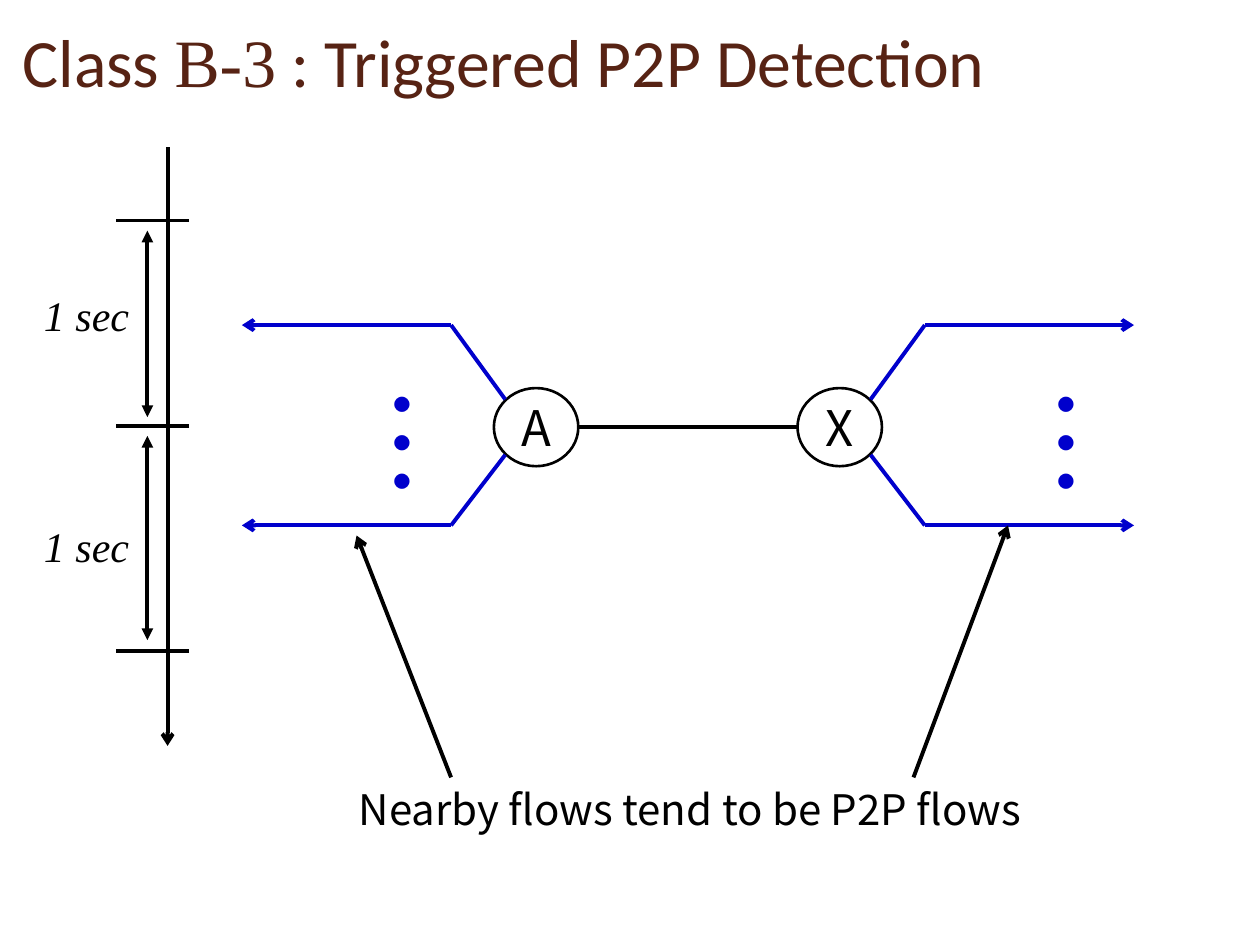
"""Build the slide on triggered P2P detection: a time axis beside a flow graph."""
from lxml import etree
from pptx import Presentation, util as u
from pptx.dml.color import RGBColor
from pptx.enum import shapes as sh, text as t
from pptx.oxml.ns import qn

BROWN = RGBColor(0x57, 0x23, 0x14)
BLACK = RGBColor(0, 0, 0)
BLUE = RGBColor(0, 0, 0xCC)
WHITE = RGBColor(255, 255, 255)
LATIN, SERIF, SANS = "Calibri", "Times New Roman", "Noto Sans CJK KR"

TITLE = [("Class ", LATIN), ("B-3", SERIF), (" : Triggered P2P Detection", LATIN)]
CAPTION = "Nearby flows tend to be P2P flows"
INTERVAL, INTERVAL_TOPS = "1 sec", (2.25, 4.08)
SPANS = [(1.83, 3.31), (3.46, 5.08)]
TICKS = (1.75, 3.38, 5.17)
AXIS_X, SPAN_X, TICK_LEFT, TICK_RIGHT = 1.33, 1.17, 0.92, 1.5
NODES = [("A", 3.92), ("X", 6.33)]
NODE_TOP, NODE_W, NODE_H = 3.08, 0.67, 0.62
MIRROR = 2 * 5.46
BRANCHES = [(3.17, 2.58), (3.61, 4.17)]
ROOT_X, BEND_X, TIP_X = 4.01, 3.58, 1.92
ELLIPSIS_LEFTS = (2.5, 7.77)
POINTERS = [((3.58, 6.17), (2.83, 4.25)), ((7.25, 6.17), (8, 4.17))]

deck = Presentation()
deck.slide_width, deck.slide_height = u.Inches(10), u.Inches(7.5)
slide = deck.slides.add_slide(deck.slide_layouts[6])


def write(frame, runs, size, color, italic=False, wrap=True, middle=False):
    frame.word_wrap = wrap
    frame.vertical_anchor = t.MSO_ANCHOR.MIDDLE if middle else t.MSO_ANCHOR.TOP
    for words, font in runs:
        run = frame.paragraphs[0].add_run()
        run.text = words
        run.font.size, run.font.italic = u.Pt(size), italic
        run.font.color.rgb = color
        run.font.name = font
        east = etree.SubElement(run.font._element, qn("a:ea"))
        east.set("typeface", font)


def label(box, runs, size, color, **style):
    frame = slide.shapes.add_textbox(*map(u.Inches, box)).text_frame
    write(frame, runs, size, color, **style)
    return frame


def line(start, end, color=BLACK, head=None, tail=None):
    link = slide.shapes.add_connector(
        sh.MSO_CONNECTOR.STRAIGHT, *map(u.Inches, (*start, *end)))
    link.line.color.rgb, link.line.width = color, u.Pt(2.25)
    stroke = link.line._get_or_add_ln()
    for tag, arrow in (("a:headEnd", head), ("a:tailEnd", tail)):
        if arrow:
            etree.SubElement(stroke, qn(tag)).set("type", arrow)
    etree.SubElement(link._element.spPr, qn("a:effectLst"))


label((0.08, 0.13, 9.75, 0.7), TITLE, 38.7, BROWN, middle=True)

for top in INTERVAL_TOPS:
    label((0.25, top, 0.92, 0.5), [(INTERVAL, SERIF)], 24, BLACK, italic=True)
for top, bottom in SPANS:
    line((SPAN_X, top), (SPAN_X, bottom), head="triangle", tail="triangle")
for y in TICKS:
    line((TICK_RIGHT, y), (TICK_LEFT, y))
line((AXIS_X, 1.17), (AXIS_X, 5.92), tail="arrow")

for name, left in NODES:
    node = slide.shapes.add_shape(
        sh.MSO_SHAPE.OVAL, *map(u.Inches, (left, NODE_TOP, NODE_W, NODE_H)))
    node.shadow.inherit = False
    node.fill.solid()
    node.fill.fore_color.rgb = WHITE
    node.line.color.rgb, node.line.width = BLACK, u.Pt(1.5)
    write(node.text_frame, [(name, SANS)], 28, BLACK, wrap=False, middle=True)
    node.text_frame.paragraphs[0].alignment = t.PP_ALIGN.CENTER
node_y = NODE_TOP + NODE_H / 2
line((NODES[0][1] + NODE_W, node_y), (NODES[1][1], node_y))

for mirrored in (False, True):
    root, bend, tip = (MIRROR - x if mirrored else x for x in (ROOT_X, BEND_X, TIP_X))
    for root_y, bend_y in BRANCHES:
        line((root, root_y), (bend, bend_y), BLUE)
        line((bend, bend_y), (tip, bend_y), BLUE, tail="arrow")
for left in ELLIPSIS_LEFTS:
    dots = label((left, 2.96, 1.31, 0.79), [("…", SANS)], 66, BLUE, wrap=False)
    dots._bodyPr.set("vert", "eaVert")

for start, end in POINTERS:
    line(start, end, tail="arrow")
label((2.75, 6.17, 5.54, 0.5), [(CAPTION, SANS)], 24, BLACK, wrap=False)

deck.save("out.pptx")
